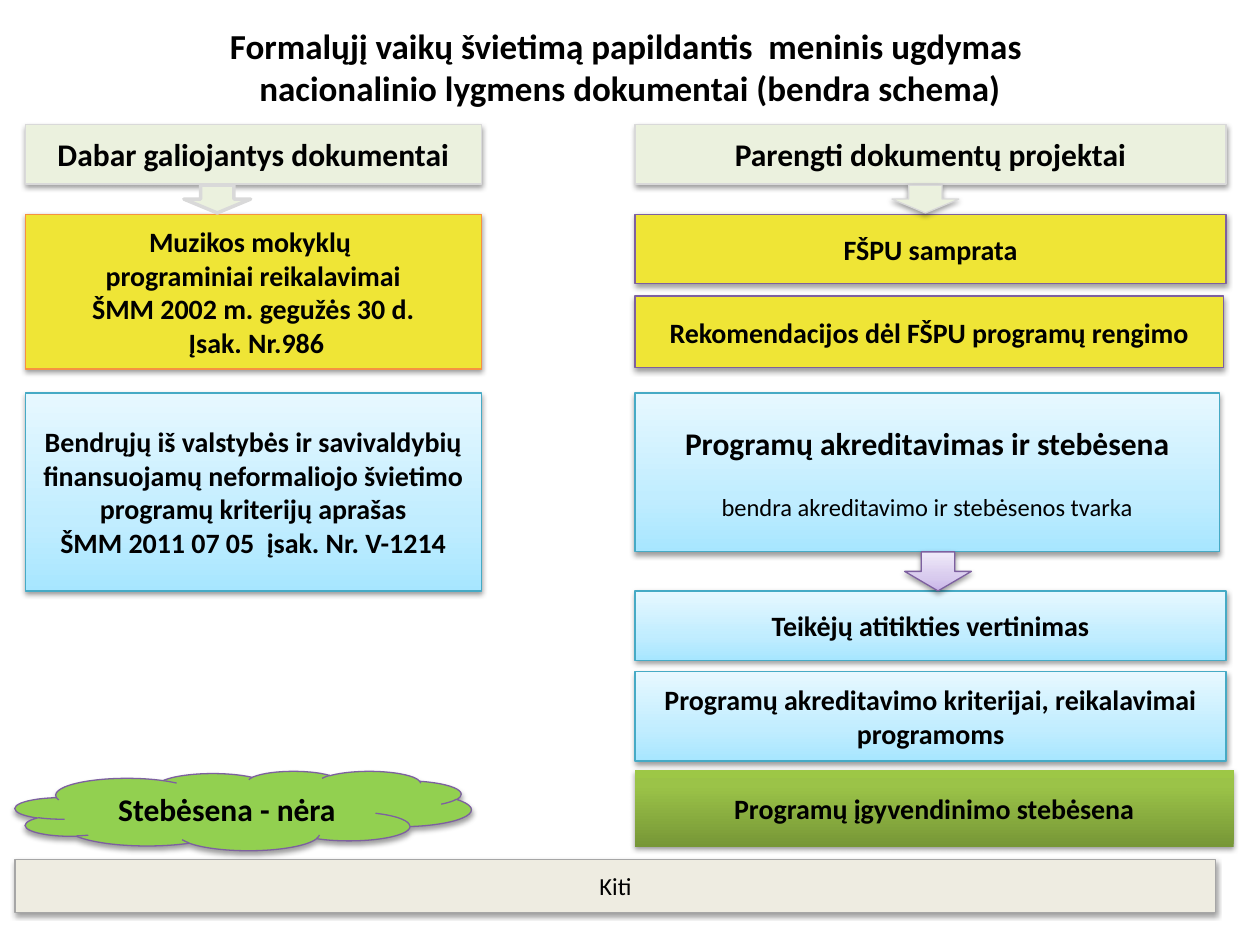
"""Build the slide on arts education documents, in force and drafted."""
from lxml.etree import SubElement
from pptx import Presentation
from pptx.dml.color import RGBColor
from pptx.enum.shapes import MSO_SHAPE
from pptx.enum.text import MSO_ANCHOR, MSO_AUTO_SIZE, PP_ALIGN
from pptx.oxml.ns import qn
from pptx.util import Inches, Pt

COLORS = {
    "black": "000000", "yellow": "EFE536", "orange": "F69240",
    "purple": "7D60A0", "teal": "46AAC5", "lime": "92D050",
    "pale": "EBF1DE", "silver": "D9D9D9", "cream": "EEECE1", "gray": "A6A6A6",
}
FADES = {
    "sky": [(0, "A7E6FF"), (35, "C1EDFF"), (100, "E7F8FF")],
    "moss": [(0, "779737"), (80, "9BC348"), (100, "9DC746")],
    "lilac": [(0, "C9B5E8"), (35, "D8CBEE"), (100, "F0EAF9")],
}
LEFT, RIGHT = 0.2, 5.04
WIDE, BROAD = 3.62, 4.69
RECT, ARROW, CLOUD = MSO_SHAPE.RECTANGLE, MSO_SHAPE.DOWN_ARROW, MSO_SHAPE.CLOUD


def write(para, text, size, bold=True):
    para.alignment = PP_ALIGN.CENTER
    run = para.add_run()
    run.text = text
    run.font.name = "Calibri"
    run.font.size = Pt(size)
    run.font.bold = bold
    run.font.color.rgb = RGBColor.from_string(COLORS["black"])


def draw(kind, box, fill, line, width=0.75, shadow=True):
    shape = slide.shapes.add_shape(kind, *[Inches(n) for n in box])
    props = shape._element.spPr
    if fill in FADES:
        shape.fill.gradient()
        shape.fill.gradient_angle = 90
        stops = props.find(qn("a:gradFill")).find(qn("a:gsLst"))
        for stop in list(stops):
            stops.remove(stop)
        for pos, tone in FADES[fill]:
            stop = SubElement(stops, qn("a:gs"), pos=str(pos * 1000))
            SubElement(stop, qn("a:srgbClr"), val=tone)
    else:
        shape.fill.solid()
        shape.fill.fore_color.rgb = RGBColor.from_string(COLORS[fill])
    if line:
        shape.line.color.rgb = RGBColor.from_string(COLORS[line])
        shape.line.width = Pt(width)
    else:
        shape.line.fill.background()
    shape.shadow.inherit = False
    if shadow:
        glow = SubElement(props.find(qn("a:effectLst")), qn("a:outerShdw"),
                          blurRad=str(Pt(3.1)), dist=str(Pt(1.6)),
                          dir="5400000", rotWithShape="0")
        tone = SubElement(glow, qn("a:srgbClr"), val=COLORS["black"])
        SubElement(tone, qn("a:alpha"), val="38000")
    return shape


deck = Presentation()
deck.slide_width, deck.slide_height = Inches(10), Inches(7.5)
slide = deck.slides.add_slide(deck.slide_layouts[5])

title = slide.shapes.title
title.left, title.top = Inches(0.5), Inches(0.3)
title.width, title.height = Inches(9), Inches(0.46)
frame = title.text_frame
frame.word_wrap = True
frame.auto_size = MSO_AUTO_SIZE.NONE
frame.vertical_anchor = MSO_ANCHOR.MIDDLE
head = frame.paragraphs[0]
write(head, "Formalųjį vaikų švietimą papildantis  meninis ugdymas ", 20)
head.add_line_break()
write(head, "nacionalinio lygmens dokumentai (bendra schema)", 20)

boxes = [
    (RECT, (LEFT, 1.7, WIDE, 1.23), "yellow", "orange", [
        ("Muzikos mokyklų ", 16), ("programiniai reikalavimai", 16),
        ("ŠMM 2002 m. gegužės 30 d.", 16), (" Įsak. Nr.986", 16)]),
    (RECT, (LEFT, 3.12, WIDE, 1.57), "sky", "teal", [
        ("Bendrųjų iš valstybės ir savivaldybių finansuojamų neformaliojo "
         "švietimo programų kriterijų aprašas", 16),
        ("ŠMM 2011 07 05  įsak. Nr. V-1214", 16)]),
    (CLOUD, (0.12, 6.12, WIDE, 0.63), "lime", "purple",
     [("Stebėsena - nėra", 18)]),
    (RECT, (RIGHT, 1.7, BROAD, 0.55), "yellow", "purple",
     [("FŠPU samprata", 16)]),
    (RECT, (LEFT, 0.99, WIDE, 0.47), "pale", "silver",
     [("Dabar galiojantys dokumentai", 18)]),
    (RECT, (RIGHT, 0.99, BROAD, 0.47), "pale", "silver",
     [("Parengti dokumentų projektai", 18)]),
    (RECT, (RIGHT, 2.35, 4.67, 0.57), "yellow", "purple",
     [("Rekomendacijos dėl FŠPU programų rengimo", 16)]),
    (RECT, (RIGHT, 5.33, BROAD, 0.71), "sky", "teal",
     [("Programų akreditavimo kriterijai, reikalavimai programoms", 16)]),
    (RECT, (RIGHT, 6.11, 4.75, 0.61), "moss", None,
     [("Programų įgyvendinimo stebėsena", 16)]),
    (RECT, (RIGHT, 3.12, 4.64, 1.26), "sky", "teal", [
        ("Programų akreditavimas ir stebėsena", 18),
        ("bendra akreditavimo ir stebėsenos tvarka", 14)]),
    (RECT, (RIGHT, 4.69, BROAD, 0.55), "sky", "teal",
     [("Teikėjų atitikties vertinimas", 16)]),
    (RECT, (0.12, 6.82, 9.53, 0.42), "cream", "gray", [("Kiti", 14)]),
]
for kind, box, fill, line, texts in boxes:
    frame = draw(kind, box, fill, line).text_frame
    frame.word_wrap = True
    frame.vertical_anchor = MSO_ANCHOR.MIDDLE
    for spot, (text, size) in enumerate(texts):
        para = frame.add_paragraph() if spot else frame.paragraphs[0]
        write(para, text, size, bold=size > 14)
        if spot and size == 14:
            para.space_before = Pt(17)

draw(ARROW, (1.46, 1.47, 0.53, 0.22), "pale", "silver", 2, shadow=False)
draw(ARROW, (7.08, 1.47, 0.53, 0.22), "pale", "silver")
draw(ARROW, (7.18, 4.38, 0.53, 0.31), "lilac", "purple")

deck.save("out.pptx")
